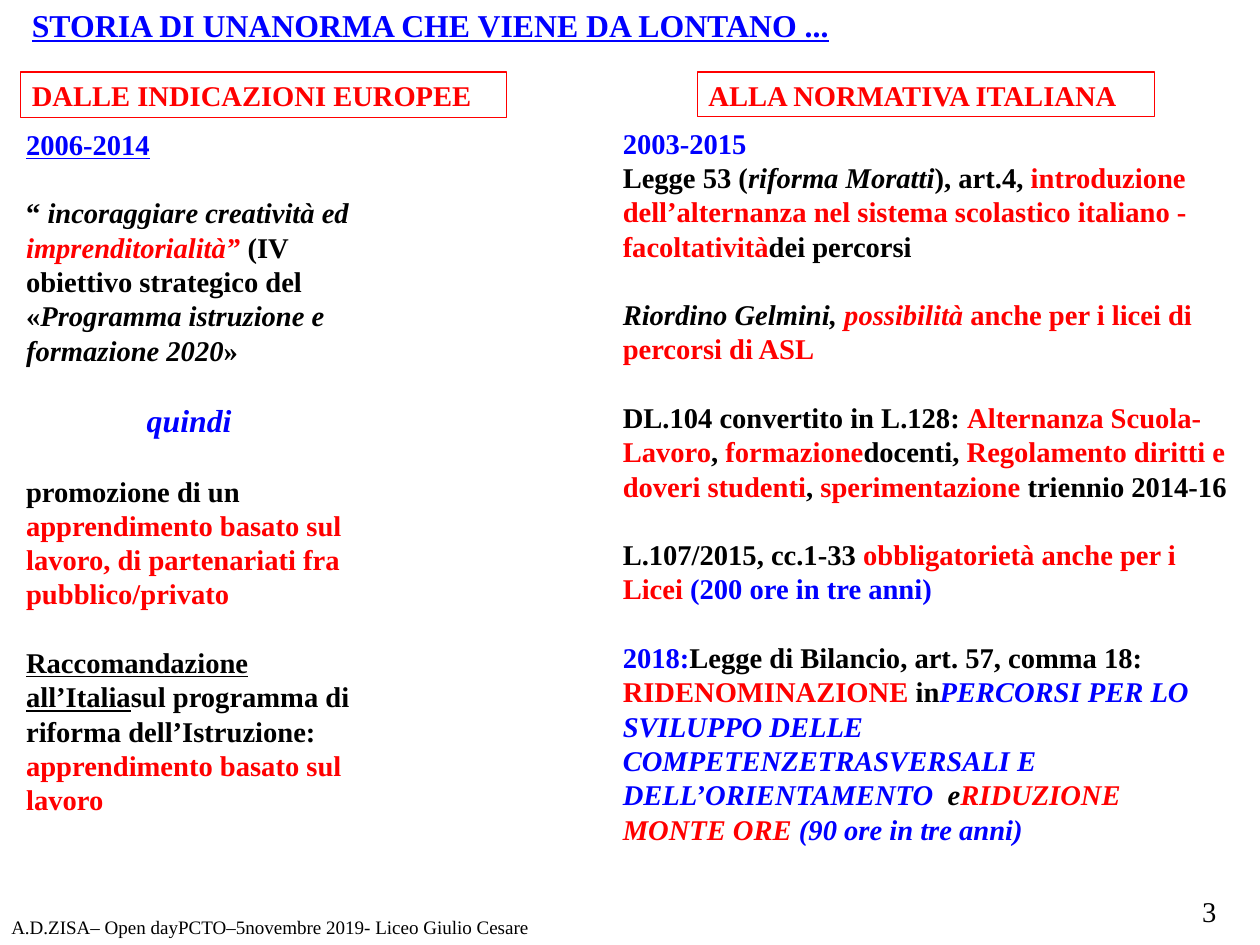
import pptx
import pptx.dml.color
import pptx.enum.shapes
import pptx.enum.text
import pptx.util

Inches, Pt = pptx.util.Inches, pptx.util.Pt
LEFT, CENTER = pptx.enum.text.PP_ALIGN.LEFT, pptx.enum.text.PP_ALIGN.CENTER

# Slide of 28 by 21 cm, in inches
SLIDE_SIZE = (28 / 2.54, 21 / 2.54)

# Theme: sizes and the gap between paragraphs in points
THEME = {
    "font": "Times New Roman",
    "black": "000000", "red": "FF0000", "blue": "0000FF",
    "title": 20, "body": 18, "footer": 12,
    "gap": 21.6, "border": 0.75,
}

# Content: a run is (text, style words); a paragraph is a list of runs
PAGE_NUMBER = [[("3", "black")]]
FOOTER = [[("A.D.ZISA– Open dayPCTO–5novembre 2019- Liceo Giulio Cesare", "black")]]
TITLE = [[("STORIA DI UNANORMA CHE VIENE DA LONTANO ...", "blue bold underline")]]
EUROPE_HEADING = [[("DALLE INDICAZIONI EUROPEE", "red bold")]]
ITALY_HEADING = [[("ALLA NORMATIVA ITALIANA", "red bold")]]

EUROPE = [
    [("2006-2014", "blue bold underline")],
    [("“ ", "black bold"),
     ("incoraggiare creatività ed ", "black bold italic"),
     ("imprenditorialità”", "red bold italic"),
     (" (IV obiettivo strategico del «", "black bold"),
     ("Programma istruzione e formazione 2020", "black bold italic"),
     ("»", "black bold")],
    [("quindi", "blue bold italic")],
    [("promozione di un ", "black bold"),
     ("apprendimento basato sul lavoro, di partenariati fra pubblico/privato",
      "red bold")],
    [("Raccomandazione all’Italia", "black bold underline"),
     ("sul programma di riforma dell’Istruzione: ", "black bold"),
     ("apprendimento basato sul lavoro", "red bold")],
]

ITALY = [
    [("2003-2015", "blue bold")],
    [("Legge 53 (", "black bold"),
     ("riforma Moratti", "black bold italic"),
     ("), art.4, ", "black bold"),
     ("introduzione dell’alternanza nel sistema scolastico italiano - facoltatività",
      "red bold"),
     ("dei percorsi", "black bold")],
    [("Riordino Gelmini, ", "black bold italic"),
     ("possibilità ", "red bold italic"),
     ("anche per i licei di percorsi di ASL", "red bold")],
    [("DL.104 convertito in L.128: ", "black bold"),
     ("Alternanza Scuola-Lavoro", "red bold"),
     (", ", "black bold"),
     ("formazione", "red bold"),
     ("docenti, ", "black bold"),
     ("Regolamento diritti e doveri studenti", "red bold"),
     (",", "black bold"),
     (" sperimentazione", "red bold"),
     (" triennio 2014-16", "black bold")],
    [("L.107/2015, cc.1-33 ", "black bold"),
     ("obbligatorietà anche per i Licei ", "red bold"),
     ("(200 ore in tre anni)", "blue bold")],
    [("2018:", "blue bold"),
     ("Legge di Bilancio, art. 57, comma 18:", "black bold"),
     (" RIDENOMINAZIONE ", "red bold"),
     ("in", "black bold"),
     ("PERCORSI PER LO SVILUPPO DELLE COMPETENZETRASVERSALI E DELL’ORIENTAMENTO  ",
      "blue bold italic"),
     ("e", "black bold italic"),
     ("RIDUZIONE MONTE ORE", "red bold italic"),
     (" (90 ore in tre anni)", "blue bold italic")],
]

# Layout: paragraphs, (left, top, width, height), size, alignment
PLAIN_BOXES = [
    (PAGE_NUMBER, (10.14, 7.77, 0.88, 0.5), "body", CENTER),
    (FOOTER, (0, 7.96, 9.68, 0.31), "footer", LEFT),
    (TITLE, (0.18, 0, 7.5, 0.43), "title", LEFT),
]
HEADINGS = [
    (EUROPE_HEADING, (0.18, 0.63, 4.25, 0.4)),
    (ITALY_HEADING, (6.1, 0.63, 4, 0.39)),
]
# The last two: paragraphs set directly under the one above, centred ones
COLUMNS = [
    (EUROPE, (0.13, 1.06, 3.05, 6.15), {0}, {2}),
    (ITALY, (5.35, 1.05, 5.49, 6.42), {0, 1}, set()),
]


def color(name):
    return pptx.dml.color.RGBColor.from_string(THEME[name])


def write_paragraph(p, runs, size, align=LEFT, gap=0):
    p.alignment = align
    p.space_before = Pt(gap)
    for text, style in runs:
        tint, *flags = style.split()
        r = p.add_run()
        r.text = text
        formats = {"name": THEME["font"], "size": Pt(THEME[size])}
        formats.update({k: k in flags for k in ("bold", "italic", "underline")})
        for key, value in formats.items():
            setattr(r.font, key, value)
        r.font.color.rgb = color(tint)


def prepare_frame(sp):
    tf = sp.text_frame
    tf.word_wrap = True
    tf.vertical_anchor = pptx.enum.text.MSO_ANCHOR.TOP
    return tf


def add_box(s, place):
    return prepare_frame(s.shapes.add_textbox(*map(Inches, place)))


def main():
    prs = pptx.Presentation()
    prs.slide_width, prs.slide_height = map(Inches, SLIDE_SIZE)
    s = prs.slides.add_slide(prs.slide_layouts[6])

    # Page number, footer and title
    for (runs,), place, size, align in PLAIN_BOXES:
        write_paragraph(add_box(s, place).paragraphs[0], runs, size, align)

    # Framed column headings
    for (runs,), place in HEADINGS:
        sp = s.shapes.add_shape(
            pptx.enum.shapes.MSO_SHAPE.RECTANGLE, *map(Inches, place))
        sp.shadow.inherit = False
        sp.fill.background()
        sp.line.color.rgb = color("red")
        sp.line.width = Pt(THEME["border"])
        write_paragraph(prepare_frame(sp).paragraphs[0], runs, "body")

    # Text columns
    for paragraphs, place, tight, centred in COLUMNS:
        tf = add_box(s, place)
        for i, runs in enumerate(paragraphs):
            p = tf.add_paragraph() if i else tf.paragraphs[0]
            write_paragraph(p, runs,
                            "title" if i in centred else "body",
                            CENTER if i in centred else LEFT,
                            0 if i in tight else THEME["gap"])

    prs.save("out.pptx")


if __name__ == "__main__":
    main()
